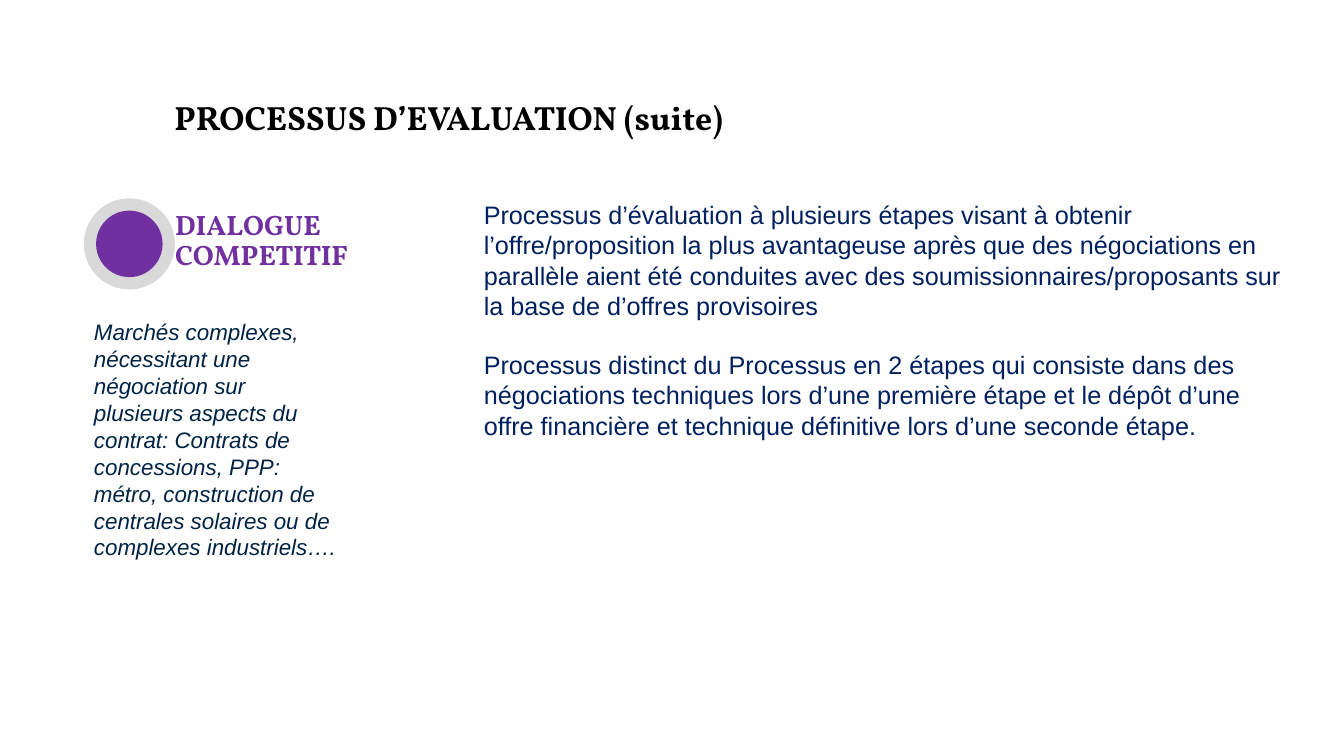
import pptx
import pptx.util
import pptx.dml.color
import pptx.enum.shapes
import pptx.enum.text

Pt = pptx.util.Pt
SHAPES = pptx.enum.shapes.MSO_SHAPE
ALIGN = pptx.enum.text.PP_ALIGN
ANCHOR = pptx.enum.text.MSO_ANCHOR

COLORS = {
    "white": "FFFFFF",
    "black": "000000",
    "grey": "D9D9D9",
    "purple": "7030A0",
    "ink": "002345",
    "navy": "002060",
}


def add_filled(shapes, kind, left, top, width, height, color):
    shape = shapes.add_shape(kind, Pt(left), Pt(top), Pt(width), Pt(height))
    shape.shadow.inherit = False
    shape.fill.solid()
    shape.fill.fore_color.rgb = pptx.dml.color.RGBColor.from_string(COLORS[color])
    shape.line.fill.background()
    return shape


def write(box, text, size, face, color, bold=False, italic=False):
    frame = box.text_frame
    frame.word_wrap = True
    frame.auto_size = pptx.enum.text.MSO_AUTO_SIZE.SHAPE_TO_FIT_TEXT
    frame.vertical_anchor = ANCHOR.TOP
    para = frame.paragraphs[0]
    para.alignment = ALIGN.LEFT
    span = para.add_run()
    span.text = text
    span.font.size = Pt(size)
    span.font.name = face
    span.font.bold = bold
    span.font.italic = italic
    span.font.color.rgb = pptx.dml.color.RGBColor.from_string(COLORS[color])
    return para


deck = pptx.Presentation()
deck.slide_width = Pt(960)
deck.slide_height = Pt(540)
page = deck.slides.add_slide(deck.slide_layouts[6])

title = add_filled(page.shapes, SHAPES.RECTANGLE, 54, 65.5, 533, 36, "white")
para = write(title, "PROCESSUS D’EVALUATION (suite)", 24, "Vollkorn", "black", bold=True)
para.alignment = ALIGN.CENTER

heading = page.shapes.add_textbox(Pt(118), Pt(147), Pt(218), Pt(51))
para = write(heading, "DIALOGUE COMPETITIF", 20, "Vollkorn", "purple", bold=True)
para.line_spacing = 0.9
heading.text_frame.vertical_anchor = ANCHOR.MIDDLE

marker = page.shapes.add_group_shape()
center_x, center_y = 92.4, 174.2
for diameter, color in ((65, "grey"), (47.5, "purple")):
    add_filled(marker.shapes, SHAPES.OVAL, center_x - diameter / 2,
               center_y - diameter / 2, diameter, diameter, color)

use_cases = page.shapes.add_textbox(Pt(60), Pt(224), Pt(190), Pt(181.5))
write(use_cases, "Marchés complexes, nécessitant une négociation sur plusieurs aspects du contrat: "
      "Contrats de concessions, PPP: métro, construction de centrales solaires ou de "
      "complexes industriels….", 16, "Arial", "ink", italic=True)

descriptions = (
    (139, 94, "Processus d’évaluation à plusieurs étapes visant à obtenir l’offre/proposition "
     "la plus avantageuse après que des négociations en parallèle aient été conduites avec "
     "des soumissionnaires/proposants sur la base de d’offres provisoires"),
    (246, 73, "Processus distinct du Processus en 2 étapes qui consiste dans des négociations "
     "techniques lors d’une première étape et le dépôt d’une offre financière et technique "
     "définitive lors d’une seconde étape."),
)
for top, height, text in descriptions:
    description = page.shapes.add_textbox(Pt(338.5), Pt(top), Pt(589.5), Pt(height))
    write(description, text, 18, "Arial", "navy")

deck.save("out.pptx")
